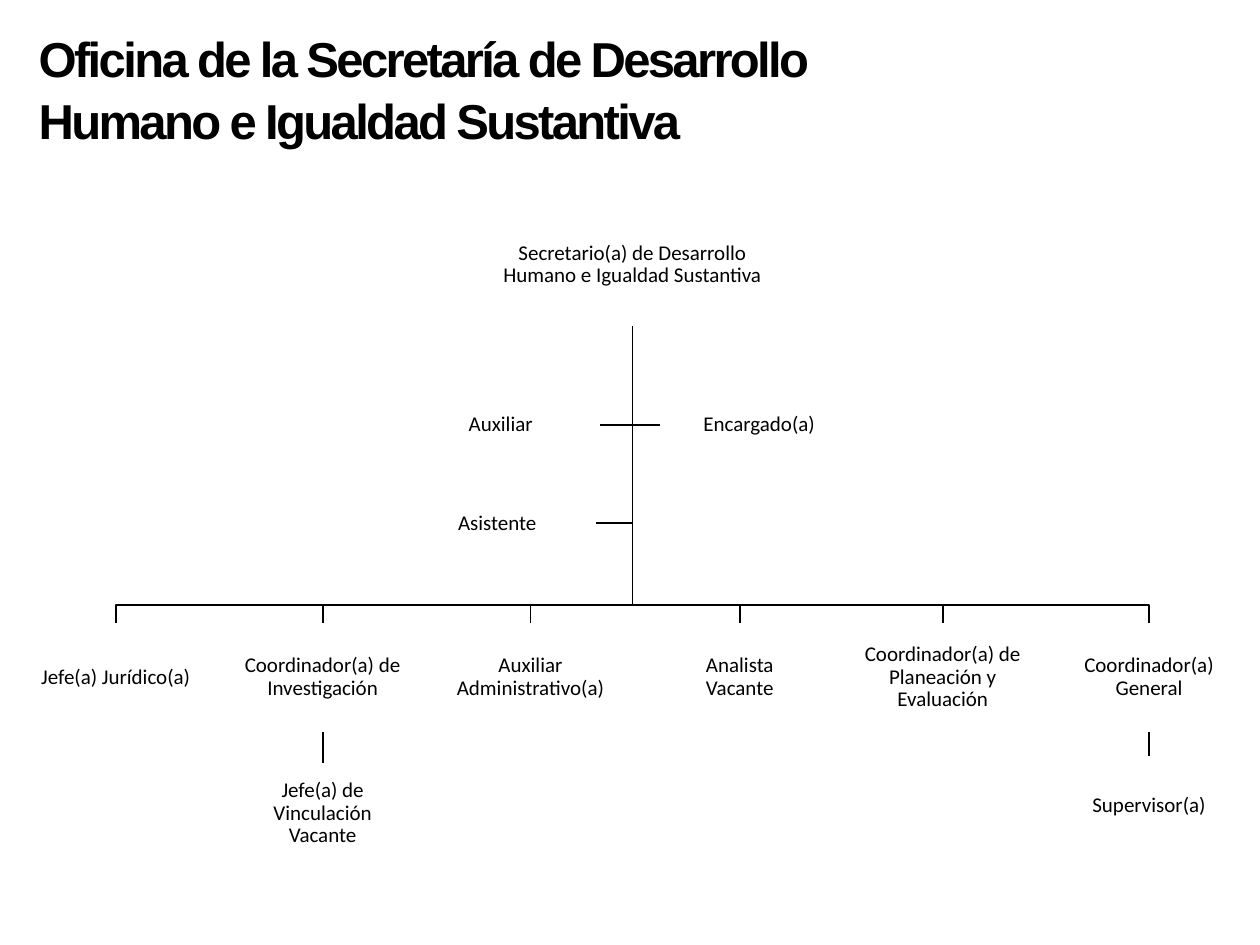
import pptx
import pptx.dml.color
import pptx.enum.shapes
import pptx.enum.text
import pptx.oxml
import pptx.oxml.ns
import pptx.util

Cm = pptx.util.Cm
Pt = pptx.util.Pt
SHAPES = pptx.enum.shapes.MSO_SHAPE
ALIGN = pptx.enum.text.PP_ALIGN
COLORS = {"ink": "000000", "paper": "FFFFFF"}
TOP, LEFT, BOTTOM, RIGHT = range(4)

BUS_Y = 12.2
ROW_TOP, ROW_HEIGHT = 12.55, 2.21
BOX_WIDTH = 3.51
SIDE_SIZE = (3.99, 1.6)
# Left edge, label, and the report below (label, top) if any
UNITS = [
    (0.58, "Jefe(a) Jurídico(a)", None),
    (4.75, "Coordinador(a) de Investigación",
     ("Jefe(a) de Vinculación\nVacante", 15.39)),
    (8.94, "Auxiliar Administrativo(a)", None),
    (13.16, "Analista\nVacante", None),
    (17.25, "Coordinador(a) de Planeación y Evaluación", None),
    (21.41, "Coordinador(a)\nGeneral", ("Supervisor(a)", 15.24)),
]
# Left, top, label, side that faces the trunk
STAFF = [
    (8.1, 7.77, "Auxiliar", RIGHT),
    (13.31, 7.77, "Encargado(a)", LEFT),
    (8.03, 9.75, "Asistente", RIGHT),
]


def color(name):
    return pptx.dml.color.RGBColor.from_string(COLORS[name])


def write(tf, text, font="Calibri", size=12, bold=False, align=ALIGN.CENTER,
          line=0.9, tracking=None, inset=0.02):
    """Fill a text frame; a newline in the text is a line break."""
    tf.word_wrap = True
    tf.vertical_anchor = pptx.enum.text.MSO_ANCHOR.MIDDLE
    tf.margin_left = tf.margin_right = Cm(inset)
    tf.margin_top = tf.margin_bottom = Cm(min(inset, 0.13))
    p = tf.paragraphs[0]
    p.text = text.replace("\n", "\v")
    p.alignment = align
    p.line_spacing = line
    for r in p.runs:
        r.font.name, r.font.size, r.font.bold = font, Pt(size), bold
        r.font.color.rgb = color("ink")
        if tracking is not None:
            r.font._element.set("spc", str(round(tracking * 100)))


class Chart:
    """Draws on one slide; all lengths are in centimetres."""

    def __init__(self, slide, line_width=1):
        self.shapes = slide.shapes
        self.line_width = Pt(line_width)

    def stroke(self, line):
        line.color.rgb = color("ink")
        line.width = self.line_width

    def title(self, text, x, y, w, h):
        sp = self.shapes.add_textbox(Cm(x), Cm(y), Cm(w), Cm(h))
        write(sp.text_frame, text, font="Arial", size=28, bold=True,
              align=ALIGN.LEFT, line=1.05, tracking=-1.5, inset=0.25)

    def box(self, text, x, y, w, h):
        sp = self.shapes.add_shape(SHAPES.RECTANGLE, Cm(x), Cm(y), Cm(w), Cm(h))
        sp.shadow.inherit = False
        sp.fill.solid()
        sp.fill.fore_color.rgb = color("paper")
        sp.line.fill.background()
        write(sp.text_frame, text)
        return sp

    def elbow(self, points):
        """Open line through the points, given in EMU."""
        builder = self.shapes.build_freeform(*points[0])
        builder.add_line_segments(points[1:], close=False)
        sp = builder.convert_to_shape()
        sp.shadow.inherit = False
        sp.fill.background()
        self.stroke(sp.line)

    def link(self, upper, lower):
        cxn = self.shapes.add_connector(
            pptx.enum.shapes.MSO_CONNECTOR.STRAIGHT, 0, 0, 0, 0)
        cxn.begin_connect(upper, BOTTOM)
        cxn.end_connect(lower, TOP)
        self.stroke(cxn.line)
        cxn._element.spPr.append(pptx.oxml.parse_xml(
            "<a:effectLst %s/>" % pptx.oxml.ns.nsdecls("a")))


def main():
    prs = pptx.Presentation()
    prs.slide_width, prs.slide_height = Cm(25.4), Cm(19.05)
    chart = Chart(prs.slides.add_slide(prs.slide_layouts[6]))

    chart.title("Oficina de la Secretaría de Desarrollo Humano e Igualdad Sustantiva",
                0.53, 0.33, 18.52, 2.87)
    head = chart.box("Secretario(a) de Desarrollo Humano e Igualdad Sustantiva",
                     9.75, 4.09, 6, 2.49)
    trunk = head.left + head.width // 2
    start = (trunk, head.top + head.height)

    for x, y, text, side in STAFF:
        sp = chart.box(text, x, y, *SIDE_SIZE)
        edge = sp.left + (sp.width if side == RIGHT else 0)
        middle = sp.top + sp.height // 2
        chart.elbow([start, (trunk, middle), (edge, middle)])

    for x, text, report in UNITS:
        sp = chart.box(text, x, ROW_TOP, BOX_WIDTH, ROW_HEIGHT)
        center = sp.left + sp.width // 2
        chart.elbow([start, (trunk, Cm(BUS_Y)), (center, Cm(BUS_Y)), (center, sp.top)])
        if report:
            label, top = report
            chart.link(sp, chart.box(label, x, top, BOX_WIDTH, 2.01))

    prs.save("out.pptx")


if __name__ == "__main__":
    main()
